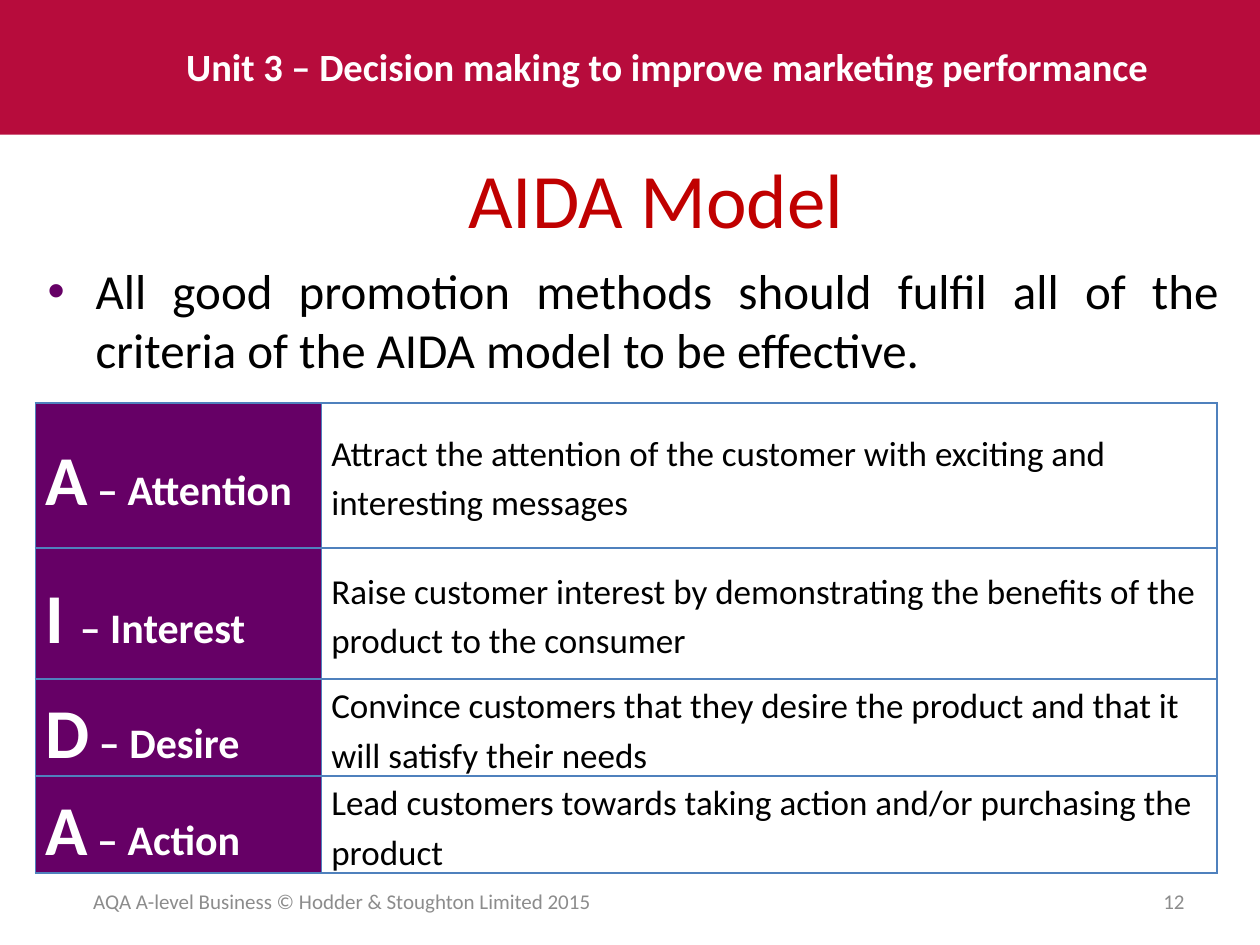
"""Build the AIDA model slide with its four-row table."""
from lxml.etree import SubElement as Sub
from pptx import Presentation
from pptx.dml.color import RGBColor
from pptx.enum.shapes import MSO_SHAPE as Shape
from pptx.enum.text import MSO_ANCHOR as Anchor, PP_ALIGN as Align
from pptx.oxml.ns import qn
from pptx.util import Inches, Pt

PURPLE, WHITE, BLACK, GREY, BLUE = "660066", "FFFFFF", "000000", "8C8C8C", "4F81BD"


def style(font, size, tint, bold=False):
    """Set name, size, colour and weight of a font."""
    font.name, font.size, font.bold = "Calibri", Pt(size), bold
    font.color.rgb = RGBColor.from_string(tint)


def label(box, text, size, tint, align=Align.LEFT, bold=False, anchor=Anchor.TOP):
    """Add a text box of one paragraph and return the paragraph."""
    frame = slide.shapes.add_textbox(*map(Inches, box)).text_frame
    frame.word_wrap = True
    frame.vertical_anchor = anchor
    para = frame.paragraphs[0]
    para.text, para.alignment = text, align
    style(para.font, size, tint, bold)
    return para


deck = Presentation()
deck.slide_width, deck.slide_height = Inches(10), Inches(7.5)
slide = deck.slides.add_slide(deck.slide_layouts[6])

band = slide.shapes.add_shape(Shape.RECTANGLE, 0, 0, Inches(10), Inches(1.07))
band.shadow.inherit = False
band.fill.solid()
band.fill.fore_color.rgb = RGBColor.from_string("B70C3C")
band.line.fill.background()

label((1.38, 0.29, 8.03, 0.47),
      "Unit 3 – Decision making to improve marketing performance", 22, WHITE, bold=True)
label((0.83, 1.15, 8.75, 0.84), "AIDA Model", 44, "C00000", Align.CENTER)

rows = [
    (1.15, "A", " – Attention",
     "Attract the attention of the customer with exciting and interesting messages"),
    (1.04, "I ", "– Interest",
     "Raise customer interest by demonstrating the benefits of the product to the consumer"),
    (0.77, "D", " – Desire",
     "Convince customers that they desire the product and that it will satisfy their needs"),
    (0.77, "A", " – Action",
     "Lead customers towards taking action and/or purchasing the product"),
]
grid = slide.shapes.add_table(len(rows), 2, Inches(0.28), Inches(3.2),
                              Inches(9.38), Inches(3.73)).table
grid.columns[0].width, grid.columns[1].width = Inches(2.27), Inches(7.11)

for r, (high, initial, word, detail) in enumerate(rows):
    grid.rows[r].height = Inches(high)
    parts = [[(initial, 40), (word, 24)], [(detail, 20)]]
    for c, runs in enumerate(parts):
        cell = grid.cell(r, c)
        cell.vertical_anchor = Anchor.MIDDLE
        cell.margin_left = cell.margin_right = Inches(0.08)
        cell.margin_top = cell.margin_bottom = 0
        props = cell._tc.get_or_add_tcPr()
        for side in "LRTB":
            edge = Sub(props, qn(f"a:ln{side}"), w=str(Pt(1)))
            Sub(Sub(edge, qn("a:solidFill")), qn("a:srgbClr"), val=BLUE)
        if c == 0:
            cell.fill.solid()
            cell.fill.fore_color.rgb = RGBColor.from_string(PURPLE)
        else:
            cell.fill.background()
        para = cell.text_frame.paragraphs[0]
        para.line_spacing = 1.15
        for text, size in runs:
            run = para.add_run()
            run.text = text
            style(run.font, size, BLACK if c else WHITE, c == 0)

para = label((0.28, 2.02, 9.49, 1.4),
             "All good promotion methods should fulfil all of the criteria of the "
             "AIDA model to be effective.", 28, BLACK, Align.JUSTIFY)
props = para._p.get_or_add_pPr()
props.set("marL", str(Inches(0.38)))
props.set("indent", str(Inches(-0.38)))
tint = props.makeelement(qn("a:buClr"), {})
Sub(tint, qn("a:srgbClr"), val=PURPLE)
face = props.makeelement(qn("a:buFont"), {"typeface": "Arial"})
mark = props.makeelement(qn("a:buChar"), {"char": "•"})
for spot, item in enumerate((tint, face, mark)):
    props.insert(spot, item)

label((0.51, 6.95, 4.41, 0.4), "AQA A-level Business © Hodder & Stoughton Limited 2015",
      12, GREY, Align.CENTER, anchor=Anchor.MIDDLE)
label((7.17, 6.95, 2.33, 0.4), "12", 12, GREY, Align.RIGHT, anchor=Anchor.MIDDLE)

deck.save("out.pptx")
